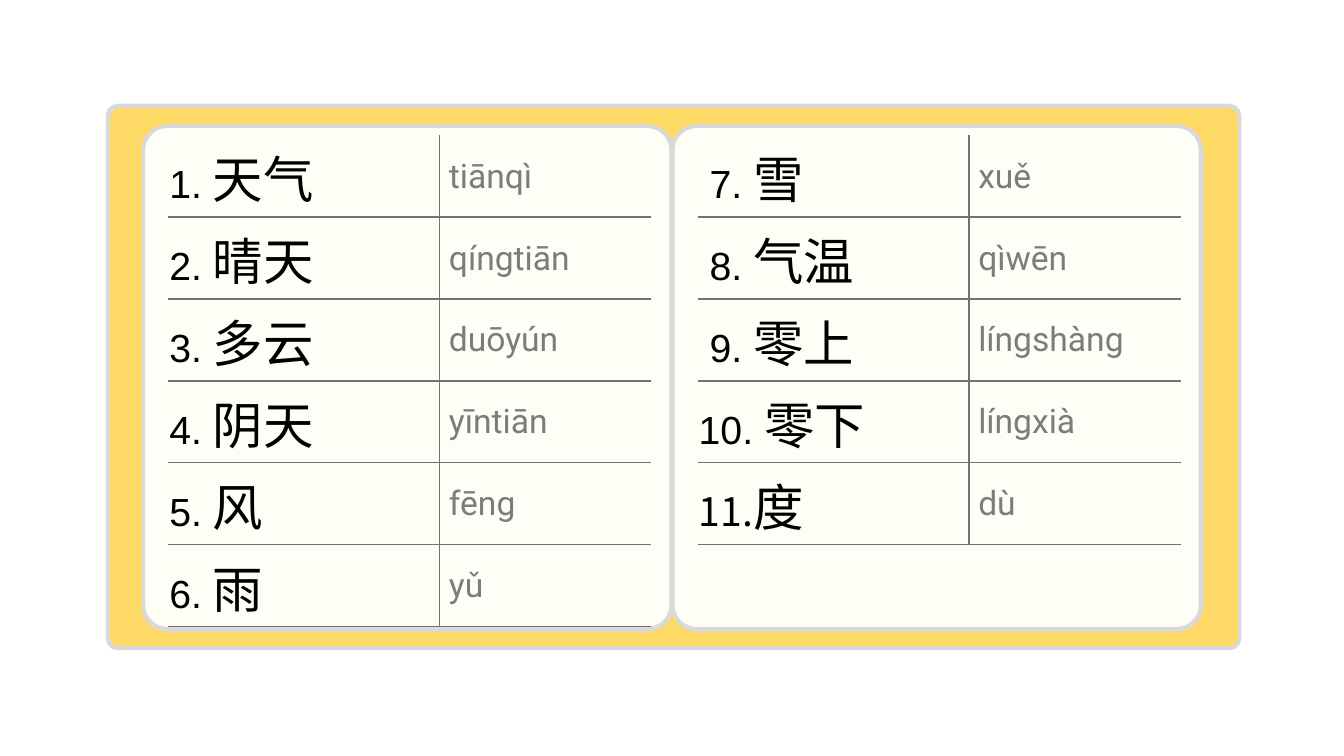
from dataclasses import dataclass

from lxml import etree
from pptx import Presentation
from pptx import util as u
from pptx.dml.color import RGBColor
from pptx.enum import shapes, text
from pptx.oxml import ns


@dataclass(frozen=True)
class Theme:
    frame: str = "FFD966"
    card: str = "FFFEF6"
    outline: str = "D9D9D9"
    rule: str = "767171"
    ink: str = "000000"
    pinyin: str = "7C7C7C"
    number_font: str = "Arial"
    hanzi_font: str = "Noto Sans CJK SC"
    pinyin_font: str = "Roboto"
    number_size: int = 28
    hanzi_size: int = 36
    pinyin_size: int = 24
    outline_width: int = 3
    rule_width: int = 1


# Number, word and pinyin of each row
LEFT_WORDS = [
    ("1. ", "天气", " tiānqì"),
    ("2. ", "晴天", " qínɡtiān"),
    ("3. ", "多云", " duōyún"),
    ("4. ", "阴天", " yīntiān"),
    ("5. ", "风", " fēnɡ"),
    ("6. ", "雨", " yǔ"),
]
RIGHT_WORDS = [
    (" 7. ", "雪", " xuě"),
    (" 8. ", "气温", " qìwēn"),
    (" 9. ", "零上", " línɡshànɡ"),
    ("10. ", "零下", " línɡxià"),
    ("11.", "度", " dù"),
]
COLUMN_WIDTHS = (2.69, 2.1)
ROW_HEIGHT = 0.813
PLAIN_TABLE_STYLE = "{2D5ABB26-0587-4C30-8999-92F81FD0307C}"


class SlideBuilder:
    def __init__(self, slide, theme):
        self.slide = slide
        self.theme = theme

    def panel(self, left, top, width, height, fill, rounding):
        shape = self.slide.shapes.add_shape(
            shapes.MSO_SHAPE.ROUNDED_RECTANGLE,
            u.Inches(left), u.Inches(top), u.Inches(width), u.Inches(height))
        shape.adjustments[0] = rounding
        shape.shadow.inherit = False
        shape.fill.solid()
        shape.fill.fore_color.rgb = RGBColor.from_string(fill)
        shape.line.color.rgb = RGBColor.from_string(self.theme.outline)
        shape.line.width = u.Pt(self.theme.outline_width)

    def run(self, paragraph, words, font_name, size, color):
        run = paragraph.add_run()
        run.text = words
        run.font.name = font_name
        run.font.size = u.Pt(size)
        run.font.color.rgb = RGBColor.from_string(color)
        east_asian = etree.SubElement(run.font._element, ns.qn("a:ea"))
        east_asian.set("typeface", font_name)

    def prepare_cell(self, cell, sides):
        cell.vertical_anchor = text.MSO_ANCHOR.MIDDLE
        cell.margin_left = cell.margin_right = cell.margin_top = u.Inches(0.01)
        cell.margin_bottom = 0
        cell.fill.background()
        # Borders come before the fill, in the order L, R, T, B
        properties = cell._tc.get_or_add_tcPr()
        for index, side in enumerate(sides):
            border = etree.Element(
                ns.qn(f"a:ln{side}"), w=str(u.Pt(self.theme.rule_width)))
            fill = etree.SubElement(border, ns.qn("a:solidFill"))
            etree.SubElement(fill, ns.qn("a:srgbClr"), val=self.theme.rule)
            properties.insert(index, border)

    def word_table(self, left, top, words):
        theme = self.theme
        table = self.slide.shapes.add_table(
            len(words), len(COLUMN_WIDTHS), u.Inches(left), u.Inches(top),
            u.Inches(sum(COLUMN_WIDTHS)),
            u.Inches(ROW_HEIGHT * len(words))).table
        table.first_row = table.horz_banding = False
        table._tbl.tblPr.find(ns.qn("a:tableStyleId")).text = PLAIN_TABLE_STYLE
        for column, width in zip(table.columns, COLUMN_WIDTHS):
            column.width = u.Inches(width)

        for row, (number, hanzi, pinyin) in enumerate(words):
            table.rows[row].height = u.Inches(ROW_HEIGHT)
            word_cell, pinyin_cell = table.cell(row, 0), table.cell(row, 1)
            horizontal = "TB" if row else "B"
            self.prepare_cell(word_cell, "R" + horizontal)
            self.prepare_cell(pinyin_cell, "L" + horizontal)

            # The last entry sets its number in the word's font
            number_font = (theme.number_font if number.endswith(" ")
                           else theme.hanzi_font)
            paragraph = word_cell.text_frame.paragraphs[0]
            self.run(paragraph, number, number_font, theme.number_size, theme.ink)
            self.run(paragraph, hanzi, theme.hanzi_font, theme.hanzi_size, theme.ink)
            self.run(pinyin_cell.text_frame.paragraphs[0], pinyin,
                     theme.pinyin_font, theme.pinyin_size, theme.pinyin)


def main():
    presentation = Presentation()
    presentation.slide_width = u.Inches(13.33)
    presentation.slide_height = u.Inches(7.5)
    slide = presentation.slides.add_slide(presentation.slide_layouts[6])
    theme = Theme()
    builder = SlideBuilder(slide, theme)

    # Yellow frame with two cards
    builder.panel(1.07, 1.05, 11.22, 5.38, theme.frame, 0.018)
    card_lefts = (1.42, 6.67)
    for left in card_lefts:
        builder.panel(left, 1.25, 5.24, 4.99, theme.card, 0.048)

    # Vocabulary tables
    for left, words in zip(card_lefts, (LEFT_WORDS, RIGHT_WORDS)):
        builder.word_table(left + 0.25, 1.34, words)

    presentation.save("out.pptx")


if __name__ == "__main__":
    main()
